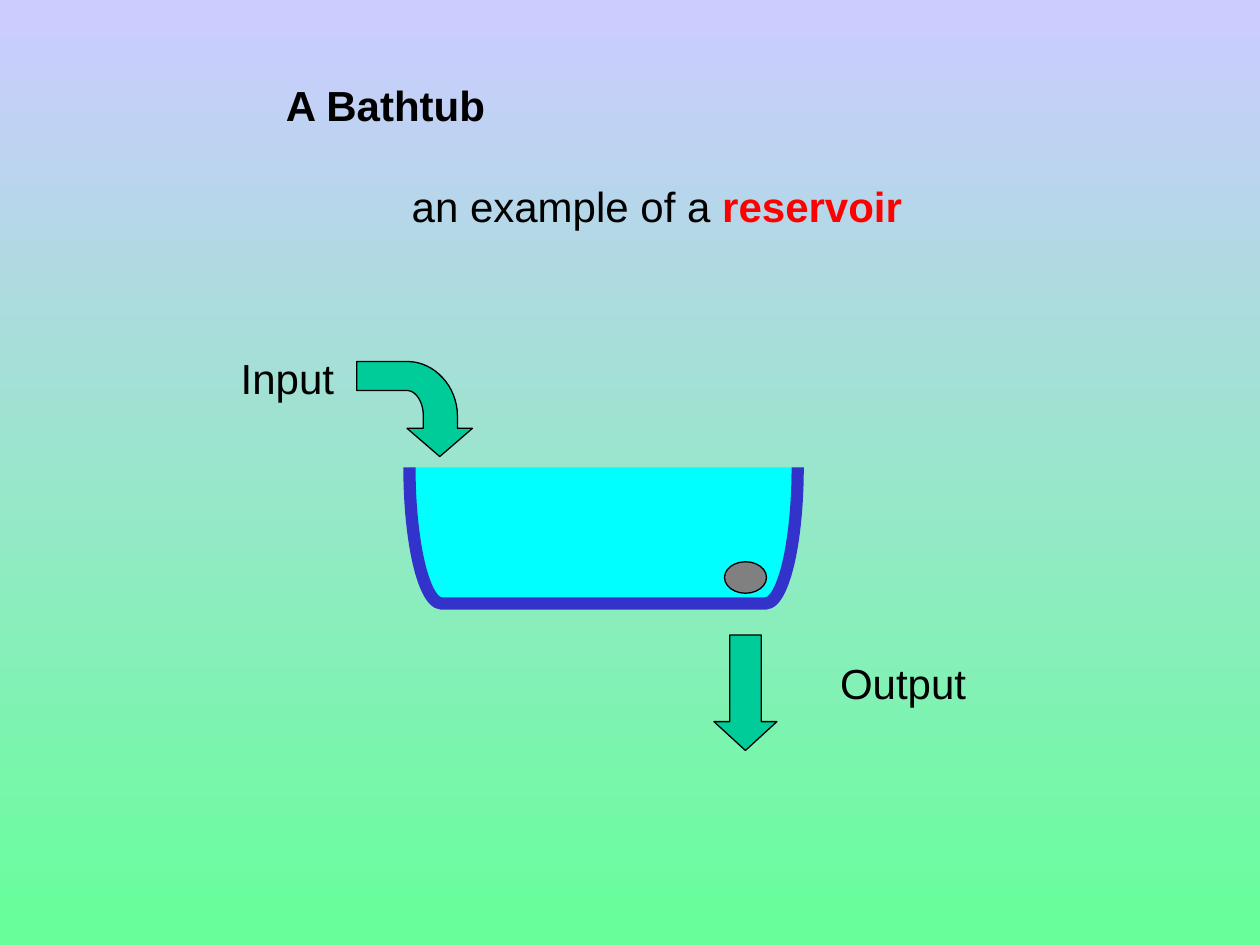
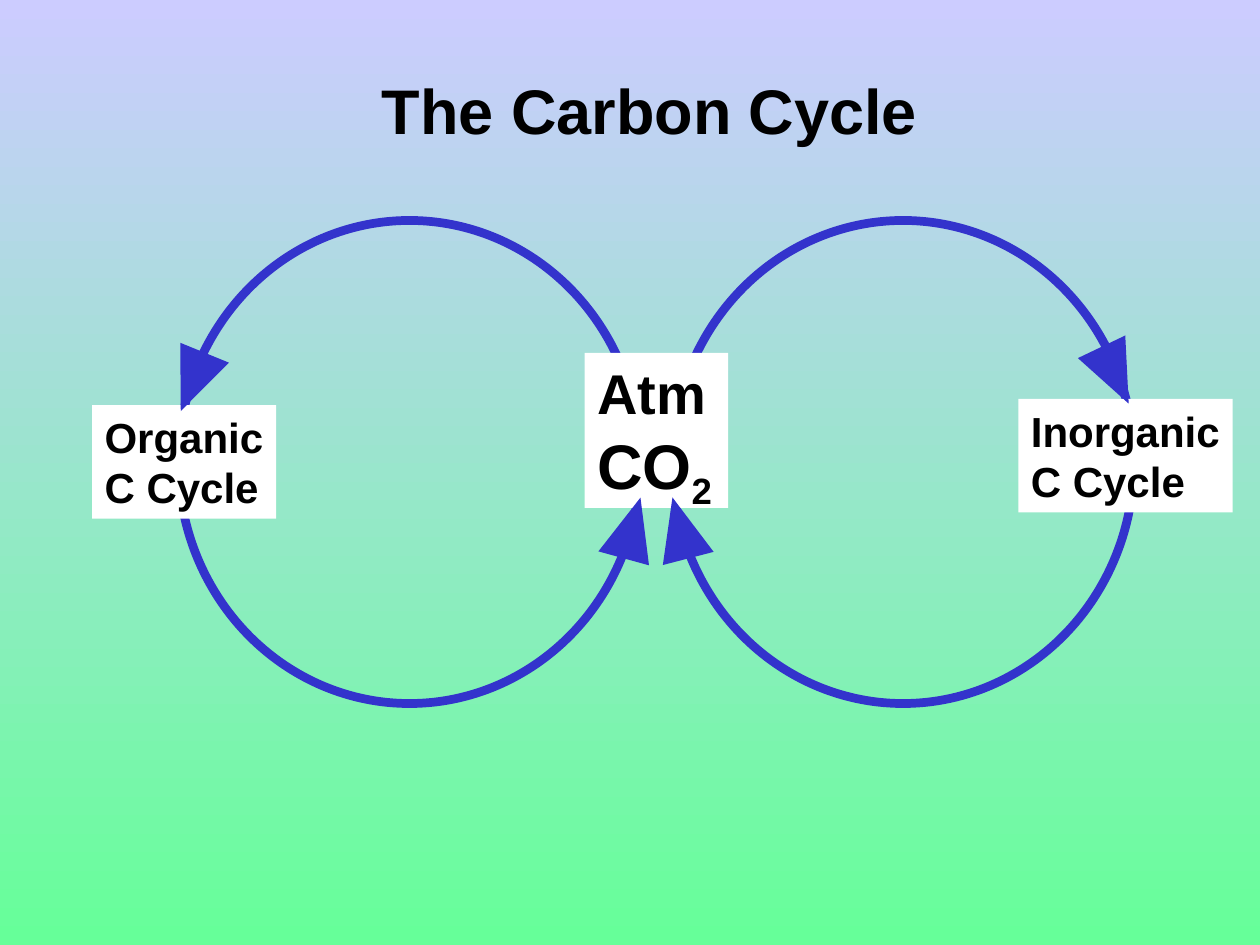
from pptx import Presentation
from pptx.dml.color import RGBColor
from pptx.enum.shapes import MSO_SHAPE
from pptx.enum.text import MSO_ANCHOR, MSO_AUTO_SIZE, PP_ALIGN
from pptx.util import Pt

HUES = {"sky": "CCCCFF", "grass": "66FF99", "ink": "000000", "red": "FF0000",
        "water": "00FFFF", "blue": "3333CC", "teal": "00CC99", "grey": "808080",
        "white": "FFFFFF"}
RGB = {name: RGBColor.from_string(code) for name, code in HUES.items()}


def paint(shape, fill=None, line=None, width=0.75):
    shape.shadow.inherit = False
    for part, hue in ((shape.fill, fill), (shape.line.fill, line)):
        if hue:
            part.solid()
            part.fore_color.rgb = RGB[hue]
        else:
            part.background()
    if line:
        shape.line.width = Pt(width)
    return shape


def write(shape, lines, align=PP_ALIGN.LEFT, wrap=True):
    """Each line is a list of runs: (text, font format)."""
    frame = shape.text_frame
    form = {"word_wrap": wrap, "auto_size": MSO_AUTO_SIZE.NONE,
            "vertical_anchor": MSO_ANCHOR.TOP,
            "margin_left": Pt(7.2), "margin_right": Pt(7.2),
            "margin_top": Pt(3.6), "margin_bottom": Pt(3.6)}
    for key, value in form.items():
        setattr(frame, key, value)
    for i, runs in enumerate(lines):
        para = frame.add_paragraph() if i else frame.paragraphs[0]
        para.alignment = align
        for text, look in runs:
            run = para.add_run()
            run.text = text
            look = {"name": "Arial", "size": 24, "bold": False, "hue": "ink"} | look
            run.font.color.rgb = RGB[look.pop("hue")]
            look["size"] = Pt(look["size"])
            for key, value in look.items():
                setattr(run.font, key, value)


deck = Presentation()
deck.slide_width, deck.slide_height = Pt(720), Pt(540)

# Shared background
back = deck.slide_master.background.fill
back.gradient()
back.gradient_angle = 270
for stop, hue in zip(back.gradient_stops, ("sky", "grass")):
    stop.color.rgb = RGB[hue]

# Slides and titles
slides = []
for text, size, area in (("A Bathtub", 24, (156.2, 41.8, 367, 36)),
                         ("The Carbon Cycle", 36, (211, 37.4, 335, 50.4))):
    slide = deck.slides.add_slide(deck.slide_layouts[5])
    title = slide.shapes.title
    title.left, title.top, title.width, title.height = map(Pt, area)
    write(title, [[(text, {"size": size, "bold": True})]])
    slides.append(slide.shapes)
bath, cycle = slides

# Bathtub: subtitle and labels
for runs, area, align in (
        ([("an example of a ", {}), ("reservoir", {"bold": True, "hue": "red"})],
         (228.2, 99.4, 310, 36), PP_ALIGN.LEFT),
        ([("Input", {})], (59.8, 198, 138.2, 36), PP_ALIGN.RIGHT),
        ([("Output", {})], (473, 372.2, 163.4, 36), PP_ALIGN.LEFT)):
    write(bath.add_textbox(*map(Pt, area)), [runs], align)

# Bathtub: tub
tub = paint(bath.add_shape(MSO_SHAPE.LEFT_BRACKET, Pt(306), Pt(195.1), Pt(77.8), Pt(221.8)),
            "water", "blue", 7)
tub.rotation = 270
tub.adjustments[0] = 0.237

# Bathtub: bent inflow arrow, each curve given by four Bezier points
outer = [(261.4, 237.6), (261.4, 221), (248.4, 206.6), (232.6, 206.6)]
inner = [(232.6, 223.2), (237.6, 223.2), (241.9, 229.7), (241.9, 237.6)]
bends = []
for curve in (outer, inner):
    bend = []
    for step in range(17):
        t = step / 16
        mix = ((1 - t) ** 3, 3 * t * (1 - t) ** 2, 3 * t * t * (1 - t), t ** 3)
        bend.append([sum(m * p[axis] for m, p in zip(mix, curve)) for axis in (0, 1)])
    bends.append(bend)
edge = [(251.3, 260.9), (270, 244.8), (261.4, 244.8), *bends[0], (203.8, 206.6),
        (203.8, 223.2), *bends[1], (241.9, 244.8), (232.6, 244.8)]
edge = [(Pt(x), Pt(y)) for x, y in edge]
pen = bath.build_freeform(*edge[0], scale=1.0)
pen.add_line_segments(edge[1:], close=True)
paint(pen.convert_to_shape(), "teal", "ink")

# Bathtub: outflow arrow and drain
flow = paint(bath.add_shape(MSO_SHAPE.DOWN_ARROW, Pt(408), Pt(362.9), Pt(36), Pt(66)),
             "teal", "ink")
flow.adjustments[0], flow.adjustments[1] = 0.5, 0.458
paint(bath.add_shape(MSO_SHAPE.OVAL, Pt(414), Pt(321), Pt(24), Pt(18)), "grey", "ink")

# Carbon cycle: two loops
for left in (102, 384):
    paint(cycle.add_shape(MSO_SHAPE.OVAL, Pt(left), Pt(126), Pt(264), Pt(276)),
          None, "blue", 5)

# Carbon cycle: boxes
bold = {"bold": True}
big = bold | {"size": 36}
pools = [
    ((334.1, 201.6, 82, 88.6), [[("Atm", bold | {"size": 32})], [("CO", big), ("2", big)]]),
    ((52.7, 231.6, 105.1, 64.8), [[("Organic", bold)], [("C Cycle", bold)]]),
    ((582, 228, 122.4, 64.8), [[("Inorganic", bold)], [("C Cycle", bold)]]),
]
for area, lines in pools:
    pool = paint(cycle.add_shape(MSO_SHAPE.RECTANGLE, *map(Pt, area)), "white")
    write(pool, lines, wrap=False)
    for run in pool.text_frame.paragraphs[1].runs:
        if run.text == "2":
            run.font._element.set("baseline", "-25000")

# Carbon cycle: arrowheads
for left, top, turn in ((373.8, 283.7, 345.5), (346.2, 283.7, 15.4),
                        (95.1, 200.2, 202.2), (622.2, 196.4, 154.5)):
    head = cycle.add_shape(MSO_SHAPE.ISOSCELES_TRIANGLE, Pt(left), Pt(top), Pt(30), Pt(36))
    paint(head, "blue").rotation = turn

deck.save("out.pptx")
